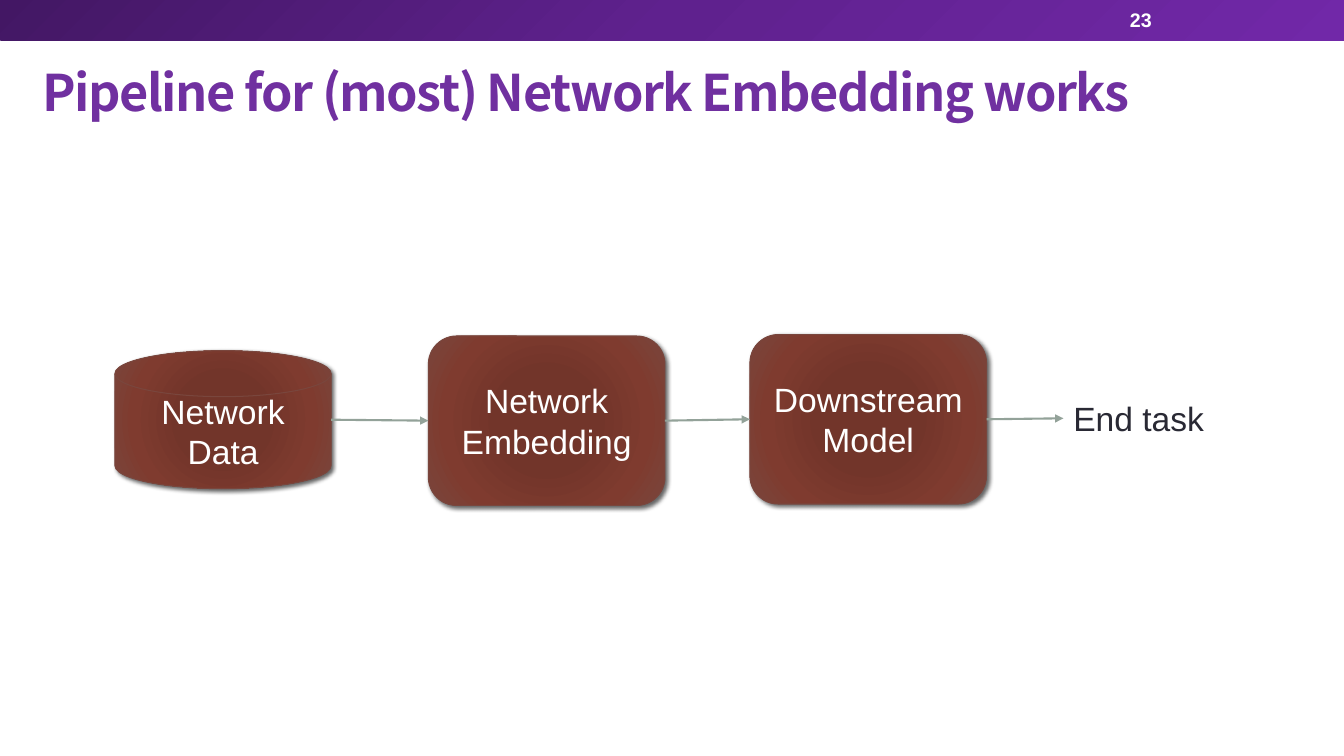
"""Build the network embedding pipeline slide."""
import dataclasses
import itertools
import typing

import lxml.etree
import pptx
import pptx.dml.color
import pptx.enum.shapes
import pptx.enum.text
import pptx.oxml
import pptx.oxml.ns
import pptx.util

Pt = pptx.util.Pt
Shape = pptx.enum.shapes.MSO_SHAPE
Align = pptx.enum.text.PP_ALIGN
Anchor = pptx.enum.text.MSO_ANCHOR
Stops = tuple[tuple[int, str], ...]


@dataclasses.dataclass(frozen=True)
class Theme:
    title_font: str = "Noto Sans CJK SC"
    body_font: str = "Arial"
    title_size: int = 36
    body_size: int = 24
    number_size: int = 14
    title_color: str = "7030A0"
    light: str = "FFFFFF"
    dark: str = "292934"
    outline: str = "79463D"
    arrow: str = "93A299"
    bar_stops: Stops = ((0, "431764"), (50, "5F218E"), (100, "7128A8"))
    stage_stops: Stops = ((0, "743327"), (34, "72352A"), (70, "7F3B2F"), (100, "79463D"))


@dataclasses.dataclass(frozen=True)
class Stage:
    label: str
    preset: typing.Optional[Shape]
    left: float
    top: float
    width: float
    height: float

    @property
    def frame(self) -> tuple:
        return tuple(Pt(n) for n in (self.left, self.top, self.width, self.height))


THEME = Theme()
BAR_SHADE = '<a:lin ang="2700000" scaled="0"/>'
STAGE_SHADE = ('<a:path path="circle"><a:fillToRect l="100000" t="100000" '
               'r="100000" b="100000"/></a:path>')
STAGES = (
    Stage("Network Data", Shape.FLOWCHART_MAGNETIC_DISK, 82.1, 250.5, 154.4, 98.6),
    Stage("Network Embedding", Shape.ROUNDED_RECTANGLE, 306, 240, 169, 121),
    Stage("Downstream Model", Shape.ROUNDED_RECTANGLE, 535.7, 239, 169, 121),
    Stage("End task", None, 759.6, 280.8, 139.7, 36),
)


def apply(target: typing.Any, values: dict) -> None:
    for name, value in values.items():
        setattr(target, name, value)


def rgb(code: str) -> pptx.dml.color.RGBColor:
    return pptx.dml.color.RGBColor.from_string(code)


def element(markup: str) -> lxml.etree._Element:
    start, rest = markup.split(" ", 1)
    return pptx.oxml.parse_xml(f'{start} {pptx.oxml.ns.nsdecls("a")} {rest}')


def write(box: typing.Any, text: str, font: dict, color: str,
          align: Align = Align.LEFT, anchor: Anchor = Anchor.MIDDLE) -> typing.Any:
    apply(box.text_frame, {"word_wrap": True, "vertical_anchor": anchor})
    para = box.text_frame.paragraphs[0]
    para.alignment = align
    span = para.add_run()
    span.text = text
    apply(span.font, font)
    span.font.color.rgb = rgb(color)
    return span


def shade(shape: typing.Any, stops: Stops, direction: str) -> None:
    shape.fill.solid()
    marks = "".join(f'<a:gs pos="{pos * 1000}"><a:srgbClr val="{color}"/></a:gs>'
                    for pos, color in stops)
    gradient = element(f'<a:gradFill rotWithShape="1"><a:gsLst>{marks}</a:gsLst>'
                       f'{direction}</a:gradFill>')
    properties = shape._element.spPr
    properties.replace(properties.find(pptx.oxml.ns.qn("a:solidFill")), gradient)


def add_header(page: typing.Any, width: int) -> None:
    bar = page.shapes.add_shape(Shape.RECTANGLE, 0, 0, width, Pt(28.8))
    bar.shadow.inherit = False
    bar.line.fill.background()
    shade(bar, THEME.bar_stops, BAR_SHADE)
    title = page.shapes.title
    apply(title, {"left": Pt(23), "top": Pt(28.8), "width": Pt(864), "height": Pt(77.8)})
    span = write(title, "Pipeline for (most) Network Embedding works",
                 {"name": THEME.title_font, "size": Pt(THEME.title_size), "bold": True},
                 THEME.title_color)
    span._r.get_or_add_rPr().set("spc", "-100")
    title.text_frame.paragraphs[0].line_spacing = 0.9
    number = page.shapes.add_textbox(Pt(800), Pt(1.4), Pt(112.3), Pt(26))
    write(number, "23",
          {"name": THEME.body_font, "size": Pt(THEME.number_size), "bold": True}, THEME.light)


def add_stage(page: typing.Any, stage: Stage) -> typing.Any:
    font = {"name": THEME.body_font, "size": Pt(THEME.body_size)}
    if stage.preset is None:
        box = page.shapes.add_textbox(*stage.frame)
        write(box, stage.label, font, THEME.dark, anchor=Anchor.TOP)
        return box
    box = page.shapes.add_shape(stage.preset, *stage.frame)
    shade(box, THEME.stage_stops, STAGE_SHADE)
    box.line.color.rgb = rgb(THEME.outline)
    box.line.width = Pt(0.75)
    box.shadow.inherit = False
    effects = box._element.spPr.find(pptx.oxml.ns.qn("a:effectLst"))
    effects.append(element(
        f'<a:outerShdw blurRad="{Pt(3)}" dist="{Pt(2)}" dir="2700000" rotWithShape="0">'
        '<a:srgbClr val="000000"><a:alpha val="60000"/></a:srgbClr></a:outerShdw>'))
    write(box, stage.label, font, THEME.light, Align.CENTER)
    return box


def add_arrow(page: typing.Any, source: typing.Any, target: typing.Any, joined: bool) -> None:
    arrow = page.shapes.add_connector(
        pptx.enum.shapes.MSO_CONNECTOR.STRAIGHT,
        source.left + source.width, source.top + source.height // 2,
        target.left, target.top + target.height // 2)
    if joined:
        arrow.begin_connect(source, 3)
    arrow.end_connect(target, 1)
    arrow.line.color.rgb = rgb(THEME.arrow)
    arrow.line.width = Pt(1.5)
    arrow.line._get_or_add_ln().append(element('<a:tailEnd type="triangle"/>'))
    arrow._element.spPr.append(element("<a:effectLst />"))


def main() -> None:
    deck = pptx.Presentation()
    apply(deck, {"slide_width": Pt(960), "slide_height": Pt(540)})
    page = deck.slides.add_slide(deck.slide_layouts[5])
    add_header(page, deck.slide_width)
    boxes = [add_stage(page, stage) for stage in STAGES]
    for stage, (source, target) in zip(STAGES, itertools.pairwise(boxes)):
        add_arrow(page, source, target, stage.preset is Shape.ROUNDED_RECTANGLE)
    deck.save("out.pptx")


if __name__ == "__main__":
    main()
